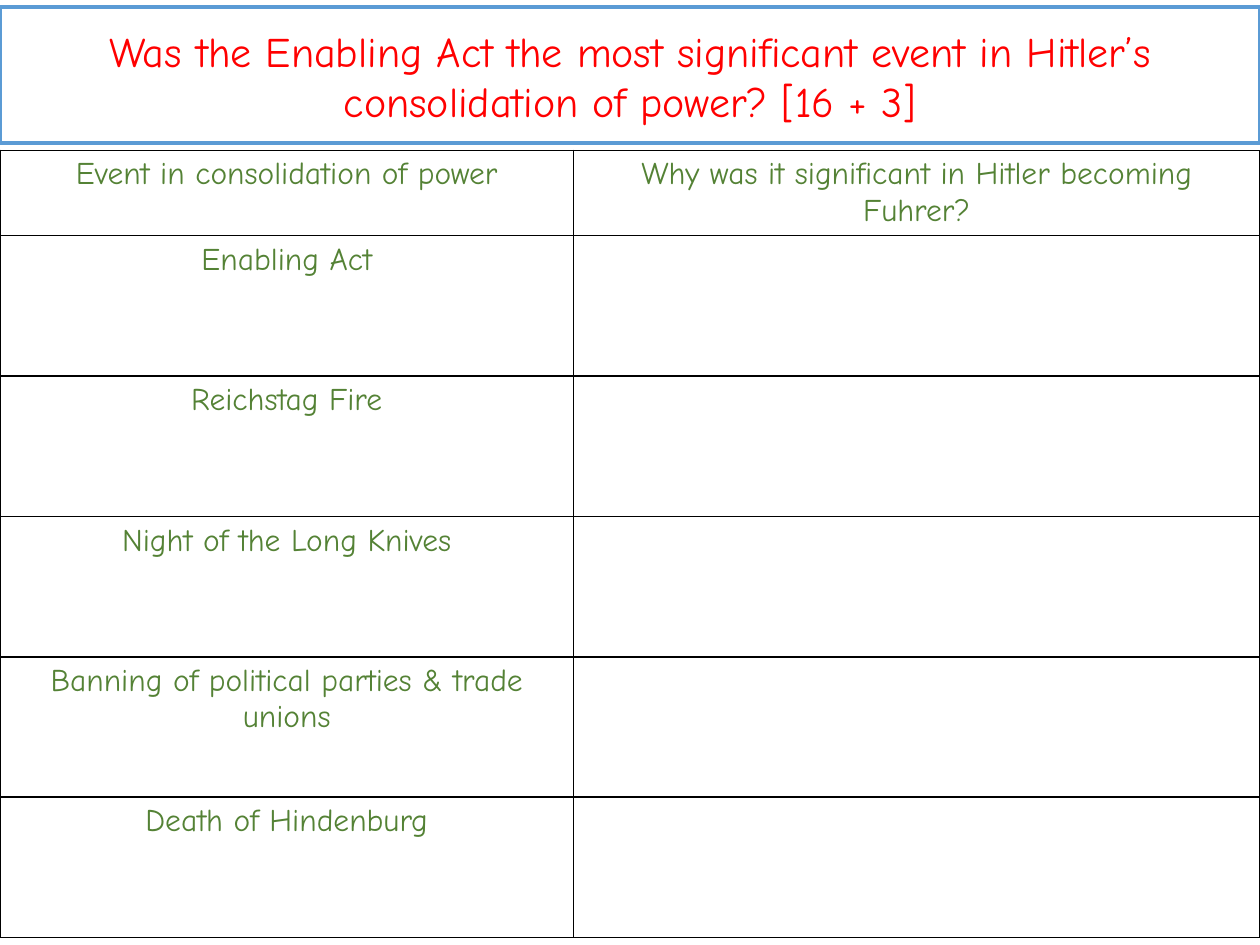
from lxml import etree
from pptx import Presentation
from pptx.dml.color import RGBColor
from pptx.enum.text import MSO_ANCHOR, MSO_AUTO_SIZE, PP_ALIGN
from pptx.oxml.ns import qn
from pptx.util import Cm, Pt

CENTER = PP_ALIGN.CENTER
MIDDLE = MSO_ANCHOR.MIDDLE
NO_AUTOFIT = MSO_AUTO_SIZE.NONE

FONT = "Comic Neue"
COLORS = {
    "question": "FF0000",
    "frame": "5B9BD5",
    "entry": "548235",
    "grid": "000000",
}
SLIDE_WIDTH, SLIDE_HEIGHT = Cm(25.4), Cm(19.05)
COLUMN_WIDTHS = [Cm(11.56), Cm(13.84)]
HEADER_HEIGHT, EVENT_HEIGHT = Cm(1.2), Cm(2.83)

QUESTION = (
    "Was the Enabling Act the most significant event in Hitler’s "
    "consolidation of power? [16 + 3]"
)
HEADINGS = [
    "Event in consolidation of power",
    "Why was it significant in Hitler becoming Fuhrer?",
]
EVENTS = [
    "Enabling Act",
    "Reichstag Fire",
    "Night of the Long Knives",
    "Banning of political parties & trade unions",
    "Death of Hindenburg",
]


def format_paragraph(paragraph, size, color):
    paragraph.alignment = CENTER
    paragraph.font.name = FONT
    paragraph.font.size = Pt(size)
    paragraph.font.bold = False
    paragraph.font.color.rgb = RGBColor.from_string(COLORS[color])


def add_question(slide):
    question = slide.shapes.title
    question.left, question.top = Cm(0), Cm(0.15)
    question.width, question.height = SLIDE_WIDTH, Cm(2.74)
    question.line.color.rgb = RGBColor.from_string(COLORS["frame"])
    question.line.width = Pt(2.25)

    frame = question.text_frame
    frame.text = QUESTION
    frame.word_wrap = True
    frame.auto_size = NO_AUTOFIT
    frame.vertical_anchor = MIDDLE
    format_paragraph(frame.paragraphs[0], 24, "question")


def add_borders(cell):
    """Draw a thin line on all four sides; call before the fill is set."""
    properties = cell._tc.get_or_add_tcPr()
    for side in ("a:lnL", "a:lnR", "a:lnT", "a:lnB"):
        line = etree.SubElement(properties, qn(side), w=str(Pt(1)))
        fill = etree.SubElement(line, qn("a:solidFill"))
        etree.SubElement(fill, qn("a:srgbClr"), val=COLORS["grid"])


def add_event_table(slide):
    rows = [HEADINGS] + [[event, ""] for event in EVENTS]
    heights = [HEADER_HEIGHT] + [EVENT_HEIGHT] * len(EVENTS)
    table = slide.shapes.add_table(
        len(rows), len(HEADINGS), Cm(0), Cm(3.03), SLIDE_WIDTH, sum(heights)
    ).table
    table.first_row = False
    table.horz_banding = False

    for column, width in zip(table.columns, COLUMN_WIDTHS):
        column.width = width
    for row, height, texts in zip(table.rows, heights, rows):
        row.height = height
        for cell, text in zip(row.cells, texts):
            add_borders(cell)
            cell.fill.background()
            cell.text = text
            format_paragraph(cell.text_frame.paragraphs[0], 18, "entry")


def main():
    presentation = Presentation()
    presentation.slide_width = SLIDE_WIDTH
    presentation.slide_height = SLIDE_HEIGHT
    title_only = presentation.slide_layouts[5]
    slide = presentation.slides.add_slide(title_only)
    add_question(slide)
    add_event_table(slide)
    presentation.save("out.pptx")


if __name__ == "__main__":
    main()
